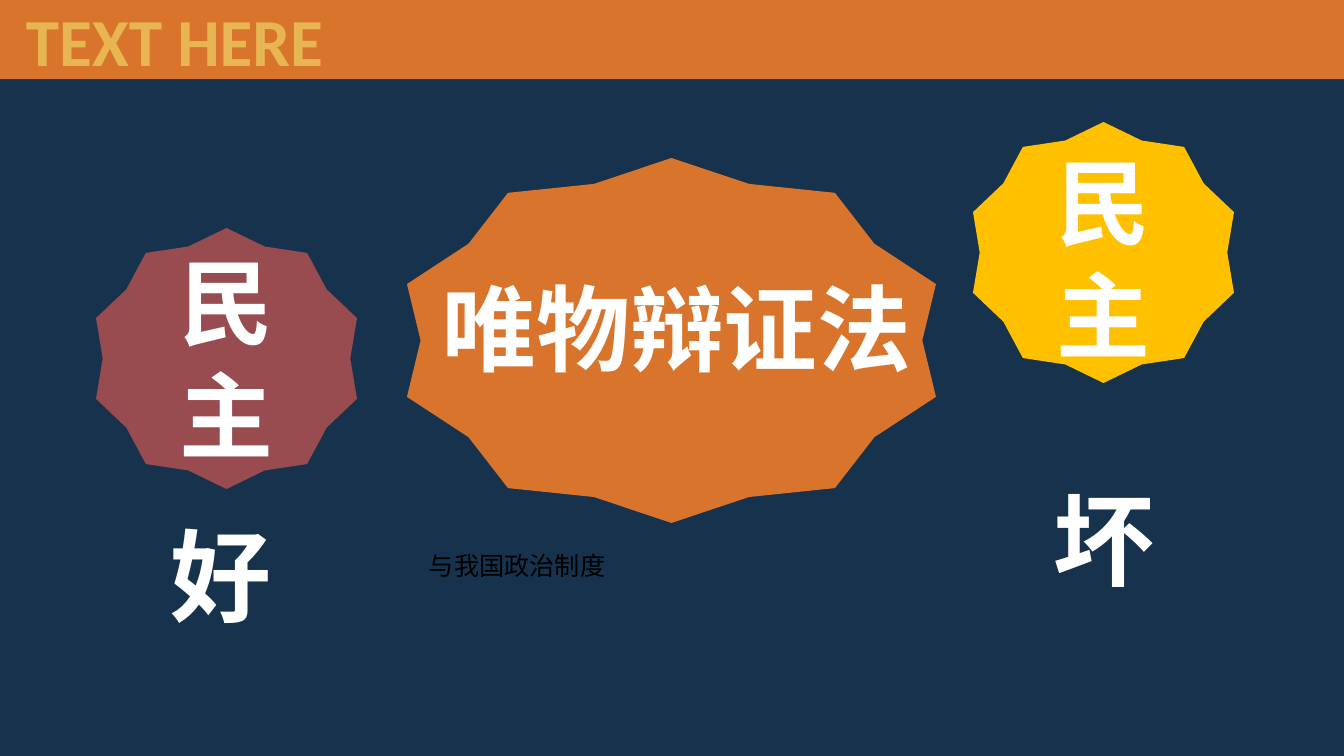
import pptx
import pptx.dml.color
import pptx.enum.shapes
import pptx.enum.text
import pptx.util

SHAPE = pptx.enum.shapes.MSO_SHAPE
ALIGN = pptx.enum.text.PP_ALIGN
PX = 12192000 / 1344
WHITE = "FFFFFF"
ORANGE = "D9742C"

prs = pptx.Presentation()
prs.slide_width = round(1344 * PX)
prs.slide_height = round(756 * PX)
slide = prs.slides.add_slide(prs.slide_layouts[6])


def rgb(color):
    return pptx.dml.color.RGBColor.from_string(color)


def add_text(box, words, size, color, bold=True, align=ALIGN.CENTER):
    text_box = slide.shapes.add_textbox(*(round(v * PX) for v in box))
    frame = text_box.text_frame
    frame.word_wrap = True
    frame.auto_size = pptx.enum.text.MSO_AUTO_SIZE.SHAPE_TO_FIT_TEXT
    paragraph = frame.paragraphs[0]
    paragraph.alignment = align
    run = paragraph.add_run()
    run.text = words
    run.font.name = "Calibri"
    run.font.size = pptx.util.Pt(size)
    run.font.bold = bold
    run.font.color.rgb = rgb(color)


# Background
slide.background.fill.solid()
slide.background.fill.fore_color.rgb = rgb("17324D")

# Title band and the three stars
for kind, box, color in [
    (SHAPE.RECTANGLE, (0, 0, 1344, 79), ORANGE),
    (SHAPE.STAR_10_POINT, (973, 122, 261, 261), "FFC000"),
    (SHAPE.STAR_10_POINT, (407, 158, 529, 365), ORANGE),
    (SHAPE.STAR_10_POINT, (96, 228, 261, 261), "984C50"),
]:
    block = slide.shapes.add_shape(kind, *(round(v * PX) for v in box))
    block.shadow.inherit = False
    block.fill.solid()
    block.fill.fore_color.rgb = rgb(color)
    block.line.fill.background()
    if kind == SHAPE.STAR_10_POINT:
        block.adjustments[0] = 0.451

# Title
add_text((16, -6, 445, 92), "TEXT HERE", 48, "E7B552", align=ALIGN.LEFT)

# Star labels
add_text((1007, 140, 193, 238), "民主", 67, WHITE)
add_text((419, 266, 516, 124), "唯物辩证法", 67, WHITE)
add_text((130, 240, 193, 238), "民主", 67, WHITE)

# Verdicts below the outer stars
add_text((949, 473, 309, 132), "坏", 72, WHITE)
add_text((66, 509, 309, 132), "好", 72, WHITE)

# Caption below the central star
add_text((419, 545, 516, 40), "与我国政治制度", 18, "000000", bold=False, align=ALIGN.LEFT)

prs.save("out.pptx")
